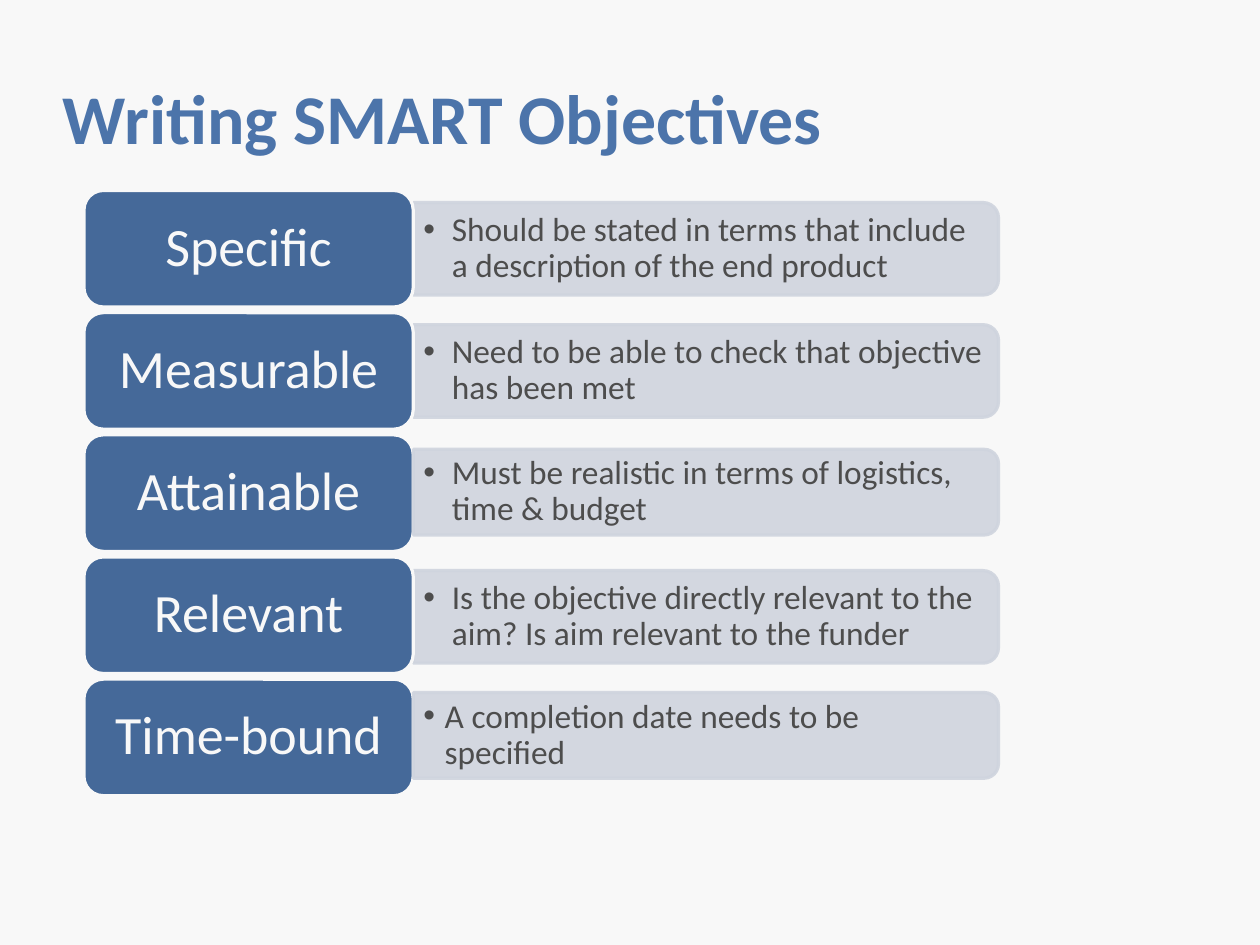
from dataclasses import dataclass
from lxml.etree import SubElement
from pptx import Presentation
from pptx.dml.color import RGBColor
from pptx.enum.shapes import MSO_SHAPE
from pptx.enum.text import MSO_ANCHOR, MSO_AUTO_SIZE, PP_ALIGN
from pptx.oxml.ns import qn
from pptx.util import Pt

TITLE = "Writing SMART Objectives"
ROWS = [
    dict(goal="Specific", note="Should be stated in terms that include a description of the end product",
         tall=58.3, shift=0, hang=18, front=False),
    dict(goal="Measurable", note="Need to be able to check that objective has been met",
         tall=58.3, shift=0, hang=18, front=False),
    dict(goal="Attainable", note="Must be realistic in terms of logistics, time & budget",
         tall=54, shift=-0.6, hang=18, front=True),
    dict(goal="Relevant", note="Is the objective directly relevant to the aim? Is aim relevant to the funder",
         tall=58.3, shift=1, hang=18, front=False),
    dict(goal="Time-bound", note="A completion date needs to be specified",
         tall=54, shift=-1.3, hang=13.5, front=True),
]


@dataclass
class Theme:
    font: str = "Calibri"
    back: str = "F8F8F8"
    head: str = "4C74AA"
    pill: str = "456999"
    panel: str = "CFD4DE"
    ink: str = "4D4D4D"
    big: int = 44
    mid: int = 34
    small: int = 21


LOOK = Theme()
LEFT, TOP, WIDE, HIGH, STEP = 52.9, 120, 207.4, 73.4, 76.95
EDGE, SPAN = 260.4, 368.6


def tint(fill, code):
    fill.solid()
    fill.fore_color.rgb = RGBColor.from_string(code)


def write(shape, text, size, color, bold=False, align=PP_ALIGN.LEFT, pad=(0, 0), lead=0.9, hang=0):
    frame = shape.text_frame
    frame.word_wrap = True
    frame.auto_size = MSO_AUTO_SIZE.NONE
    frame.vertical_anchor = MSO_ANCHOR.MIDDLE
    frame.margin_left = frame.margin_right = Pt(pad[0])
    frame.margin_top = frame.margin_bottom = Pt(pad[1])
    para = frame.paragraphs[0]
    para.alignment = align
    para.line_spacing = lead
    run = para.add_run()
    run.text = text
    font = run.font
    font.name, font.size, font.bold = LOOK.font, Pt(size), bold
    font.color.rgb = RGBColor.from_string(color)
    if hang:
        props = para._p.get_or_add_pPr()
        props.set("marL", str(Pt(hang)))
        props.set("indent", str(-Pt(hang)))
        SubElement(props, qn("a:buFont"), typeface="Arial")
        SubElement(props, qn("a:buChar"), char="•")


def block(slide, kind, box, color, edge):
    shape = slide.shapes.add_shape(kind, *map(Pt, box))
    shape.shadow.inherit = False
    tint(shape.fill, color)
    tint(shape.line.fill, edge)
    shape.line.width = Pt(2)
    return shape


def add_pill(slide, row, mid):
    box = (LEFT, mid - HIGH / 2, WIDE, HIGH)
    pill = block(slide, MSO_SHAPE.ROUNDED_RECTANGLE, box, LOOK.pill, LOOK.back)
    write(pill, row["goal"], LOOK.mid, LOOK.back, align=PP_ALIGN.CENTER, pad=(10, 5))


def add_panel(slide, row, mid):
    tall, mid = row["tall"], mid + row["shift"]
    box = (EDGE + (SPAN - tall) / 2, mid - SPAN / 2, tall, SPAN)
    panel = block(slide, MSO_SHAPE.ROUND_2_SAME_RECTANGLE, box, LOOK.panel, LOOK.panel)
    panel.rotation = 90
    for color in panel._element.spPr.iter(qn("a:srgbClr")):
        SubElement(color, qn("a:alpha"), val="90000")
    area = (EDGE, mid - tall / 2 + 2, SPAN - 3, tall - 4)
    label = slide.shapes.add_textbox(*map(Pt, area))
    write(label, row["note"], LOOK.small, LOOK.ink, pad=(6.3, 3), hang=row["hang"])


def main():
    deck = Presentation()
    deck.slide_width, deck.slide_height = Pt(793.75), Pt(595.25)
    slide = deck.slides.add_slide(deck.slide_layouts[5])
    tint(slide.background.fill, LOOK.back)
    title = slide.shapes.title
    title.left, title.top, title.width, title.height = map(Pt, (39.6, 23.8, 714.2, 99.4))
    write(title, TITLE, LOOK.big, LOOK.head, bold=True, lead=1)
    for place, row in enumerate(ROWS):
        mid = TOP + HIGH / 2 + place * STEP
        parts = (add_pill, add_panel) if row["front"] else (add_panel, add_pill)
        for draw in parts:
            draw(slide, row, mid)
    deck.save("out.pptx")


if __name__ == "__main__":
    main()
